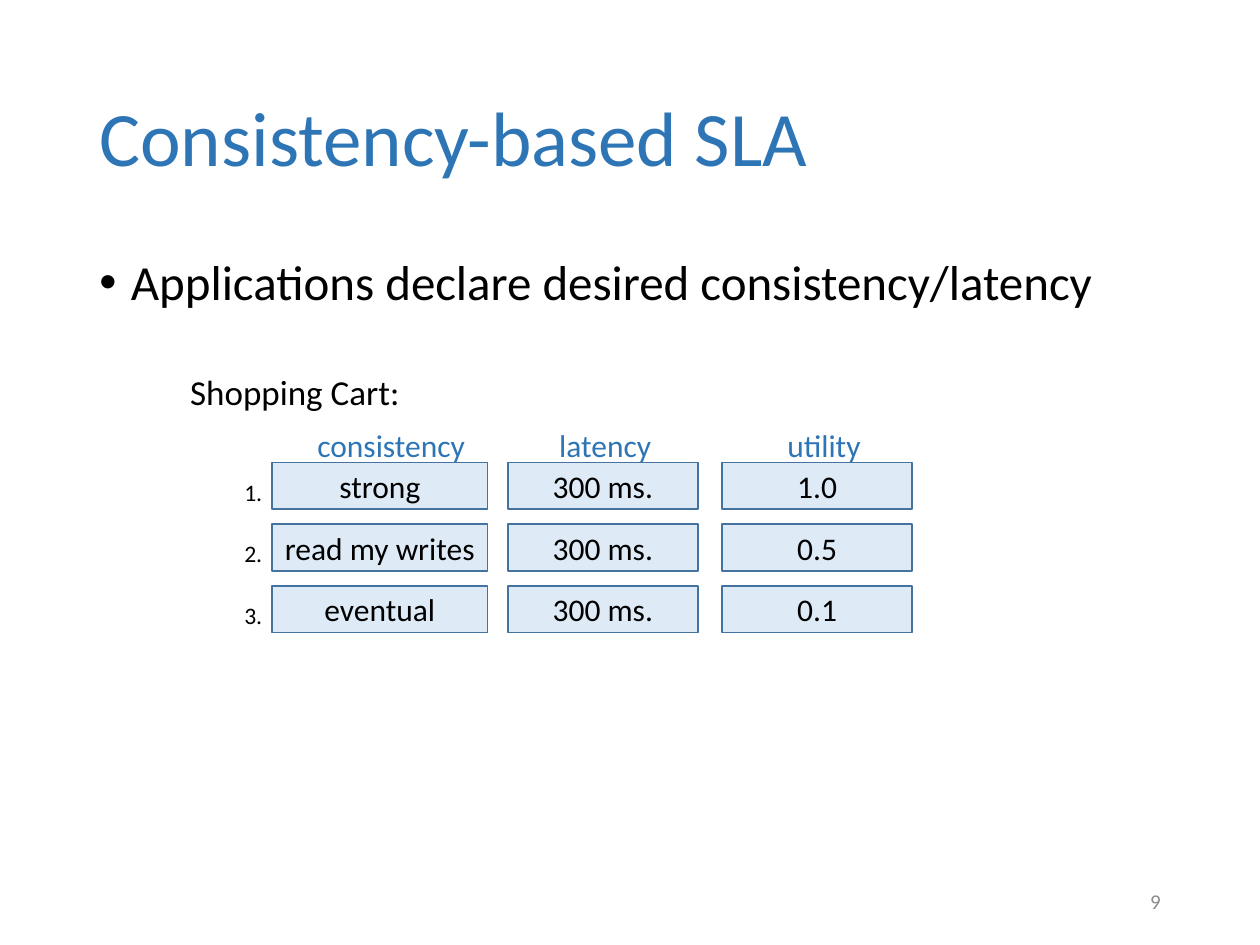
from lxml.etree import SubElement
from pptx import Presentation
from pptx.dml.color import RGBColor
from pptx.enum.shapes import MSO_SHAPE as Shape
from pptx.enum.text import MSO_ANCHOR as Anchor, PP_ALIGN as Align
from pptx.oxml.ns import qn
from pptx.util import Inches, Pt

BLUE, BLACK, GRAY = "2E75B6", "000000", "8C8C8C"
CELL_FILL, CELL_LINE = "DEEBF7", "43739E"
FIRST_ROW, ROW_STEP, ROW_HEIGHT = 3.67, 0.49, 0.37
COLUMNS = [
    ("consistency", 2.16, 1.71, 2.42, 1.41),
    ("latency", 4.03, 1.51, 4.34, 0.94),
    ("utility", 5.73, 1.51, 6.15, 0.81),
]
TERMS = [
    ("strong", "300 ms.", "1.0"),
    ("read my writes", "300 ms.", "0.5"),
    ("eventual", "300 ms.", "0.1"),
]


def color(hex_value):
    return RGBColor.from_string(hex_value)


def write(frame, text, size, ink, align=Align.LEFT, anchor=Anchor.TOP, wrap=False):
    frame.word_wrap = wrap
    frame.vertical_anchor = anchor
    paragraph = frame.paragraphs[0]
    paragraph.alignment = align
    run = paragraph.add_run()
    run.text = text
    run.font.name = "Calibri"
    run.font.size = Pt(size)
    run.font.color.rgb = color(ink)
    return paragraph


def add_label(slide, box, text, size, ink, **layout):
    label = slide.shapes.add_textbox(*map(Inches, box))
    return write(label.text_frame, text, size, ink, **layout)


def add_cell(slide, box, text):
    cell = slide.shapes.add_shape(Shape.RECTANGLE, *map(Inches, box))
    cell.shadow.inherit = False
    cell.fill.solid()
    cell.fill.fore_color.rgb = color(CELL_FILL)
    cell.line.color.rgb = color(CELL_LINE)
    cell.line.width = Pt(1)
    write(cell.text_frame, text, 18, BLACK, Align.CENTER, Anchor.MIDDLE)


def add_bullet(paragraph):
    paragraph.line_spacing = 0.9
    paragraph.space_before = Pt(10)
    properties = paragraph._p.get_or_add_pPr()
    properties.set("marL", str(Inches(0.25)))
    properties.set("indent", str(Inches(-0.25)))
    SubElement(properties, qn("a:buFont"), typeface="Arial")
    SubElement(properties, qn("a:buChar"), char="•")


def add_sla_grid(slide):
    for heading, left, width, heading_left, heading_width in COLUMNS:
        add_label(slide, (heading_left, 3.33, heading_width, 0.4), heading, 18, BLUE)
    for index, terms in enumerate(TERMS):
        top = FIRST_ROW + index * ROW_STEP
        add_label(slide, (1.84, top + 0.07, 0.35, 0.33), f"{index + 1}.", 13.5, BLACK)
        for (_, left, width, *_), term in zip(COLUMNS, terms):
            add_cell(slide, (left, top, width, ROW_HEIGHT), term)


def main():
    deck = Presentation()
    deck.slide_width, deck.slide_height = Inches(10), Inches(7.5)
    slide = deck.slides.add_slide(deck.slide_layouts[6])
    title = add_label(slide, (0.69, 0.4, 8.62, 1.45), "Consistency-based SLA", 44, BLUE,
                      anchor=Anchor.MIDDLE, wrap=True)
    title.line_spacing = 0.9
    claim = add_label(slide, (0.69, 2, 8.62, 4.76),
                      "Applications declare desired consistency/latency", 28, BLACK, wrap=True)
    add_bullet(claim)
    add_label(slide, (1.41, 2.89, 1.88, 0.44), "Shopping Cart:", 20, BLACK)
    add_sla_grid(slide)
    add_label(slide, (7.06, 6.95, 2.25, 0.4), "9", 12, GRAY,
              align=Align.RIGHT, anchor=Anchor.MIDDLE, wrap=True)
    deck.save("out.pptx")


if __name__ == "__main__":
    main()
